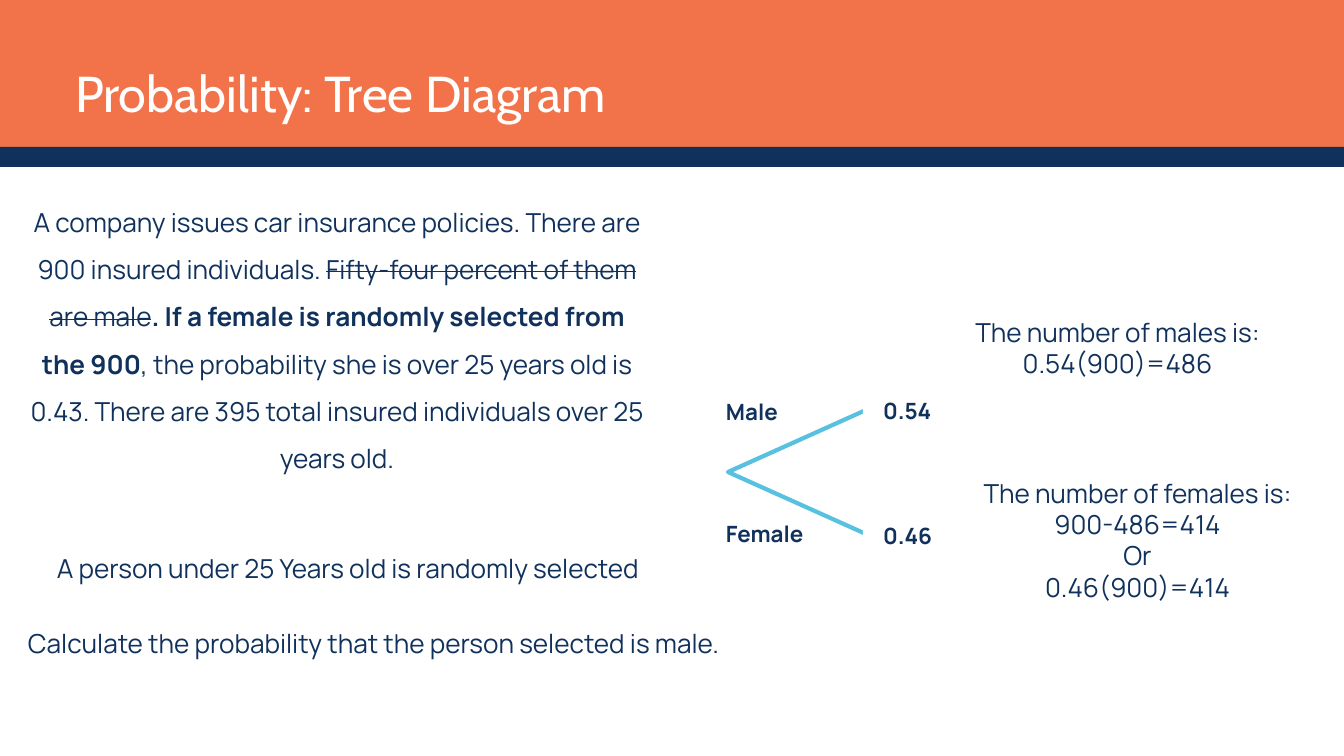
"""Builds the slide "Probability: Tree Diagram"."""
from pptx import Presentation
from pptx.dml.color import RGBColor
from pptx.enum.shapes import MSO_SHAPE
from pptx.enum.text import MSO_ANCHOR, MSO_AUTO_SIZE, PP_ALIGN
from pptx.util import Pt

PX = 914400 / 67.2
RECTANGLE, TRIANGLE = MSO_SHAPE.RECTANGLE, MSO_SHAPE.FLOWCHART_EXTRACT
LEFT, CENTER = PP_ALIGN.LEFT, PP_ALIGN.CENTER

COLORS = {"orange": "F27349", "navy": "10315C", "white": "FFFFFF", "branch": "57C1DF"}
SLIDE_SIZE = (1344, 756)
BANDS = [((0, 0, 1344, 163), "orange"), ((0, 147, 1344, 20), "navy")]

TITLE = "Probability: Tree Diagram"
TITLE_AREA = (75, 35, 1193, 165)

QUESTION = [
    ("A company issues car insurance policies. There are 900 insured individuals. ", "plain"),
    ("Fifty-four percent of them are male", "strike"),
    (". If a female is randomly selected from the 900", "bold"),
    (", the probability she is over 25 years old is 0.43. "
     "There are 395 total insured individuals over 25 years old.", "plain"),
]
TEXTS = [
    ((28, 191, 618, 280), [QUESTION], CENTER, 1.5),
    ((12, 517, 677, 58), ["A person under 25 Years old is randomly selected "], CENTER, Pt(71.4)),
    ((28, 627, 1270, 31), ["Calculate the probability that the person selected is male."], LEFT, None),
    ((947, 316, 341, 63), ["The number of males is:", "0.54(900)=486"], CENTER, None),
    ((967, 477, 341, 126),
     ["The number of females is:", "900-486=414", "Or", "0.46(900)=414"], CENTER, None),
]

BRANCHES_AREA = (735, 403, 124, 138)
OPEN_END_AREA = (863, 395, 24, 150)
LABEL_SIZE = (112, 34)
LABEL_INSET = (7, 3)
LABELS = [("Male", 719, 395), ("0.54", 876, 394), ("Female", 719, 517), ("0.46", 876, 519)]


def px(*lengths):
    return [round(length * PX) for length in lengths]


def color(name):
    return RGBColor.from_string(COLORS[name])


def set_font(font, name, size, color_name, bold=False):
    font.name, font.size, font.bold = name, Pt(size), bold
    font.color.rgb = color(color_name)


def set_frame(frame, inset=(0, 0)):
    frame.word_wrap = True
    frame.auto_size = MSO_AUTO_SIZE.NONE
    frame.vertical_anchor = MSO_ANCHOR.TOP
    frame.margin_left = frame.margin_right = px(inset[0])[0]
    frame.margin_top = frame.margin_bottom = px(inset[1])[0]


def add_block(page, area, fill):
    block = page.shapes.add_shape(RECTANGLE, *px(*area))
    block.shadow.inherit = False
    block.fill.solid()
    block.fill.fore_color.rgb = color(fill)
    block.line.fill.background()


def add_text(page, area, paragraphs, align, spacing=None, size=28, bold=False, inset=(0, 0)):
    frame = page.shapes.add_textbox(*px(*area)).text_frame
    set_frame(frame, inset)
    for index, content in enumerate(paragraphs):
        para = frame.add_paragraph() if index else frame.paragraphs[0]
        para.alignment, para.line_spacing = align, spacing
        set_font(para.font, "Manrope", size, "navy", bold)
        spans = [(content, "plain")] if isinstance(content, str) else content
        for text, style in spans:
            span = para.add_run()
            span.text = text
            if style == "bold":
                span.font.bold = True
            elif style == "strike":
                span._r.get_or_add_rPr().set("strike", "sngStrike")


def add_title(page):
    title = page.shapes.title
    page.shapes._spTree.append(title._element)
    title.left, title.top, title.width, title.height = px(*TITLE_AREA)
    title.text = TITLE
    set_frame(title.text_frame)
    para = title.text_frame.paragraphs[0]
    para.alignment, para.line_spacing = LEFT, Pt(93.8)
    set_font(para.font, "Cabin", 54, "white")


def add_tree(page):
    branches = page.shapes.add_shape(TRIANGLE, *px(*BRANCHES_AREA))
    branches.rotation = 270
    branches.shadow.inherit = False
    branches.fill.background()
    branches.line.color.rgb = color("branch")
    branches.line.width = Pt(4.5)
    add_block(page, OPEN_END_AREA, "white")
    for text, left, top in LABELS:
        add_text(page, (left, top, *LABEL_SIZE), [text], LEFT, size=24, bold=True, inset=LABEL_INSET)


def main():
    deck = Presentation()
    deck.slide_width, deck.slide_height = px(*SLIDE_SIZE)
    page = deck.slides.add_slide(deck.slide_layouts[5])
    for area, fill in BANDS:
        add_block(page, area, fill)
    add_title(page)
    for area, paragraphs, align, spacing in TEXTS:
        add_text(page, area, paragraphs, align, spacing)
    add_tree(page)
    deck.save("out.pptx")


if __name__ == "__main__":
    main()
